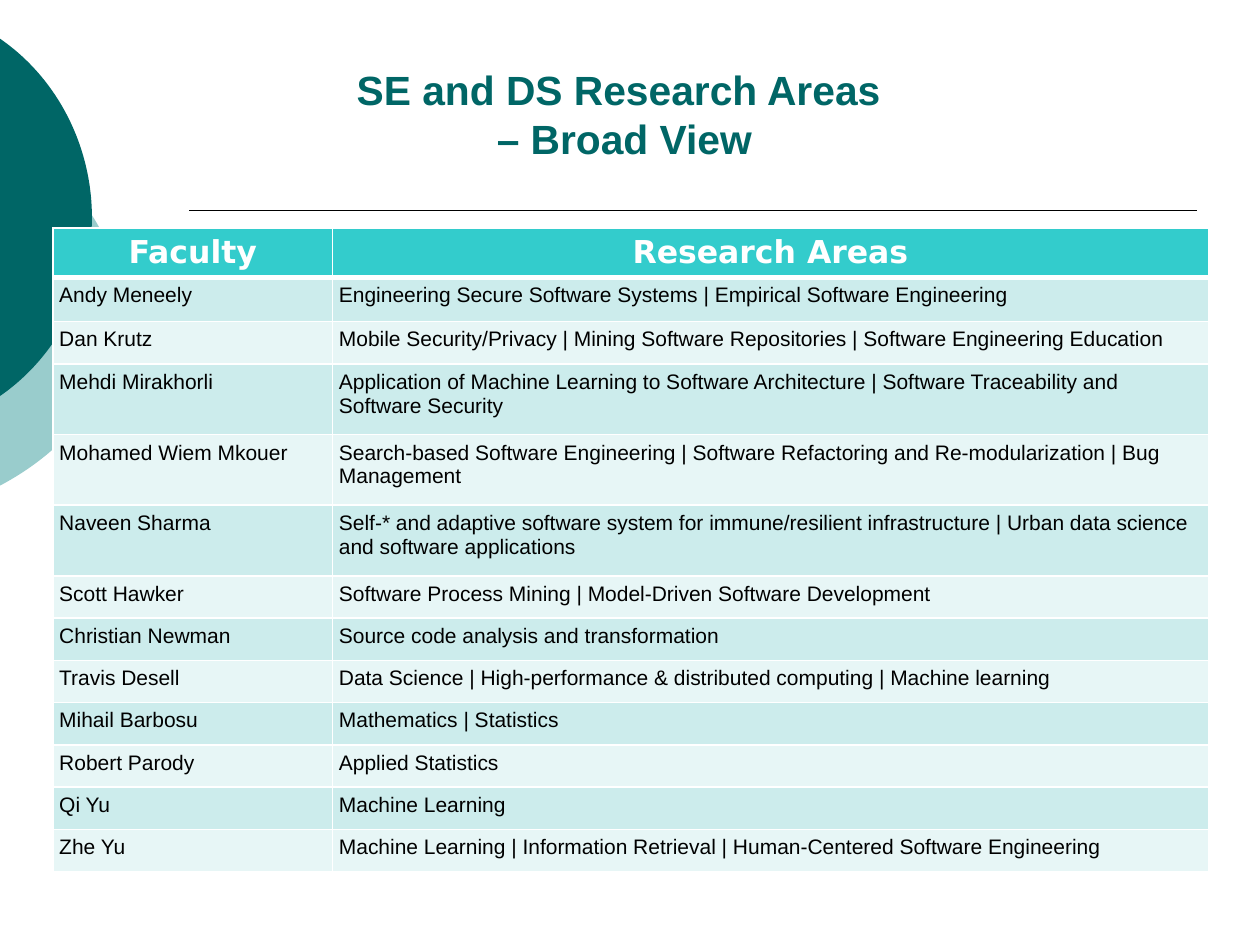
from lxml.etree import SubElement
from pptx import Presentation
from pptx.dml.color import RGBColor
from pptx.enum.shapes import MSO_CONNECTOR
from pptx.enum.text import MSO_ANCHOR, PP_ALIGN
from pptx.oxml.ns import qn
from pptx.util import Inches, Pt

COLORS = {
    "teal": "006666",
    "pale teal": "99CCCC",
    "header": "33CCCC",
    "odd row": "CCECEC",
    "even row": "E7F6F6",
    "black": "000000",
    "white": "FFFFFF",
}
INSET = Inches(0.05)


def rgb(name):
    return RGBColor.from_string(COLORS[name])


def add_border(cell, side, width):
    line = SubElement(cell._tc.get_or_add_tcPr(), qn(f"a:{side}"), w=str(Pt(width)))
    fill = SubElement(line, qn("a:solidFill"))
    SubElement(fill, qn("a:srgbClr"), val=COLORS["white"])


prs = Presentation()
prs.slide_width = Inches(10)
prs.slide_height = Inches(7.5)
slide = prs.slides.add_slide(prs.slide_layouts[5])

edge = -0.01
for top, bottom, right, bend_x, bend_y, color in [
    (1.06, 3.86, 0.96, 0.60, 0.32, "pale teal"),
    (0.30, 3.15, 0.73, 0.46, 0.32, "teal"),
]:
    middle = (top + bottom) / 2
    builder = slide.shapes.build_freeform(Inches(edge), Inches(top))
    builder.add_line_segments(
        [(Inches(right), Inches(middle)), (Inches(edge), Inches(bottom))], close=True
    )
    disc = builder.convert_to_shape()
    upper_controls = [(bend_x, top + bend_y), (right, middle - 0.56)]
    lower_controls = [(right, middle + 0.56), (bend_x, bottom - bend_y)]
    segments = list(disc._element.iter(qn("a:lnTo")))
    for segment, controls in zip(segments, (upper_controls, lower_controls)):
        curve = SubElement(segment.getparent(), qn("a:cubicBezTo"))
        for x, y in controls:
            SubElement(
                curve, qn("a:pt"), x=str(Inches(x - edge)), y=str(Inches(y - top))
            )
        curve.append(segment[0])
        segment.getparent().replace(segment, curve)
    disc.shadow.inherit = False
    disc.fill.solid()
    disc.fill.fore_color.rgb = rgb(color)
    disc.line.fill.background()

title_rule = slide.shapes.add_connector(
    MSO_CONNECTOR.STRAIGHT, Inches(1.5), Inches(1.67), Inches(9.5), Inches(1.67)
)
title_rule.line.color.rgb = rgb("black")
title_rule.line.width = Pt(1)
SubElement(title_rule._element.spPr, qn("a:effectLst"))

title = slide.shapes.title
title.left, title.top = Inches(0.58), Inches(0.42)
title.width, title.height = Inches(8.75), Inches(0.92)
title_frame = title.text_frame
title_frame.text = "SE and DS Research Areas \v– Broad View"
title_frame.word_wrap = True
title_frame.vertical_anchor = MSO_ANCHOR.BOTTOM
title_frame.margin_left = title_frame.margin_right = INSET
title_frame.margin_top = title_frame.margin_bottom = INSET
heading = title_frame.paragraphs[0]
heading.alignment = PP_ALIGN.CENTER
heading.font.name = "Arial"
heading.font.size = Pt(23.3)
heading.font.bold = True
heading.font.color.rgb = rgb("teal")

faculty_areas = [
    ("Faculty", "Research Areas"),
    ("Andy Meneely", "Engineering Secure Software Systems | Empirical Software Engineering"),
    ("Dan Krutz", "Mobile Security/Privacy | Mining Software Repositories | Software Engineering Education"),
    ("Mehdi Mirakhorli", "Application of Machine Learning to Software Architecture | Software Traceability and Software Security"),
    ("Mohamed Wiem Mkouer", "Search-based Software Engineering | Software Refactoring and Re-modularization | Bug Management"),
    ("Naveen Sharma", "Self-* and adaptive software system for immune/resilient infrastructure | Urban data science and software applications"),
    ("Scott Hawker", "Software Process Mining | Model-Driven Software Development"),
    ("Christian Newman", "Source code analysis and transformation"),
    ("Travis Desell", "Data Science | High-performance & distributed computing | Machine learning"),
    ("Mihail Barbosu", "Mathematics | Statistics"),
    ("Robert Parody", "Applied Statistics"),
    ("Qi Yu", "Machine Learning"),
    ("Zhe Yu", "Machine Learning | Information Retrieval | Human-Centered Software Engineering"),
]
table_height = 5.11
top_heights = [0.39, 0.35, 0.34, 0.56, 0.56, 0.56]
equal_rows = len(faculty_areas) - len(top_heights)
equal_height = (table_height - sum(top_heights)) / equal_rows
row_heights = top_heights + [equal_height] * equal_rows

areas_table = slide.shapes.add_table(
    len(faculty_areas), 2, Inches(0.42), Inches(1.81), Inches(9.17), Inches(table_height)
).table
areas_table.columns[0].width = Inches(2.22)
areas_table.columns[1].width = Inches(6.95)

for row, (entry, height) in enumerate(zip(faculty_areas, row_heights)):
    areas_table.rows[row].height = Inches(height)
    is_header = row == 0
    row_color = "header" if is_header else "odd row" if row % 2 else "even row"
    for column, text in enumerate(entry):
        cell = areas_table.cell(row, column)
        cell.text = text
        cell.margin_left = cell.margin_right = INSET
        cell.margin_top = cell.margin_bottom = INSET
        for side in ("lnL", "lnR", "lnT", "lnB"):
            header_edge = (is_header and side == "lnB") or (row == 1 and side == "lnT")
            add_border(cell, side, 3 if header_edge else 1)
        cell.fill.solid()
        cell.fill.fore_color.rgb = rgb(row_color)
        paragraph = cell.text_frame.paragraphs[0]
        paragraph.alignment = PP_ALIGN.CENTER if is_header else PP_ALIGN.LEFT
        paragraph.font.name = "DejaVu Sans" if is_header else "Arial"
        paragraph.font.size = Pt(18 if is_header else 12)
        paragraph.font.bold = is_header
        paragraph.font.color.rgb = rgb("white" if is_header else "black")

prs.save("out.pptx")
